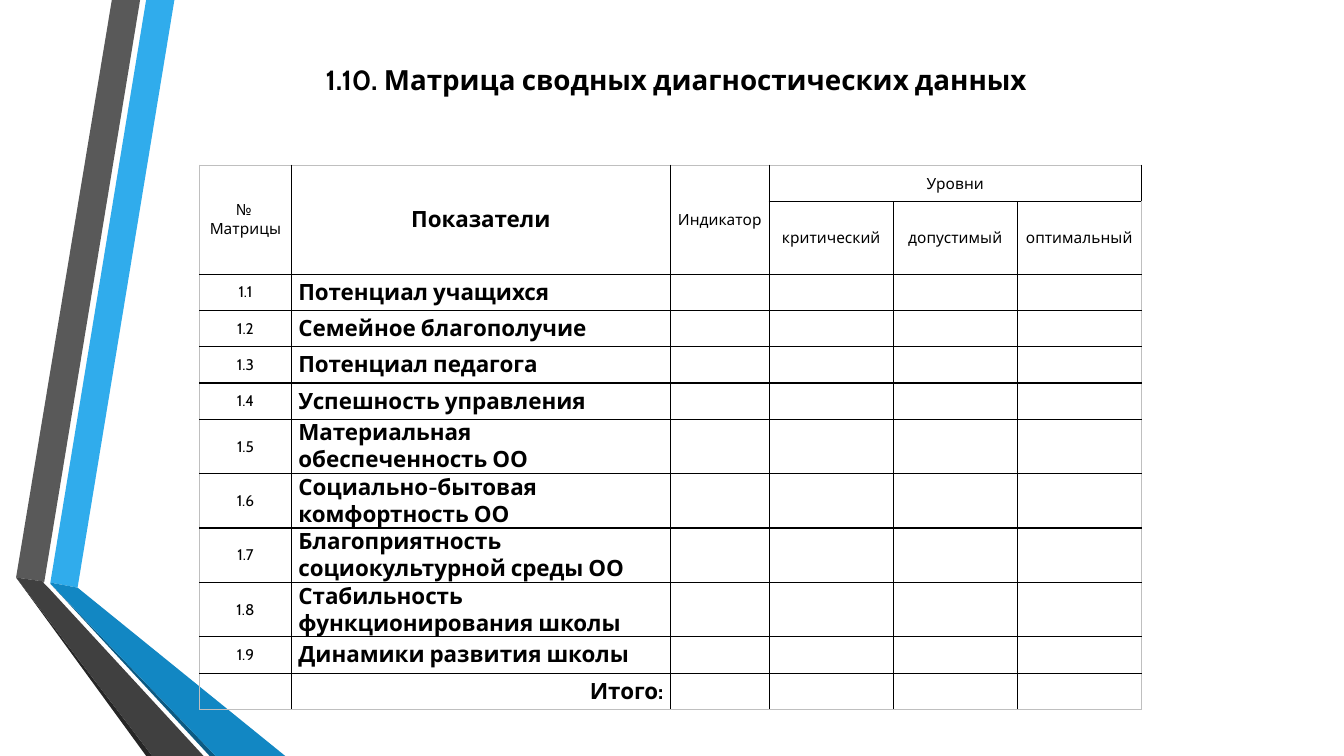
from dataclasses import dataclass

from lxml.etree import SubElement
from pptx import Presentation
from pptx.dml.color import RGBColor
from pptx.enum.text import MSO_ANCHOR, PP_ALIGN
from pptx.oxml.ns import qn
from pptx.util import Inches, Pt


@dataclass(frozen=True)
class Theme:
    font: str = "Cabin"
    ink: str = "000000"
    frame: str = "BFBFBF"
    title_size: float = 19.8
    label_size: float = 11
    indicator_size: float = 16
    rule_width: float = 1


THEME = Theme()
TITLE = "1.10. Матрица сводных диагностических данных"
HEADINGS = ["№ \vМатрицы", "Показатели", "Индикатор", "Уровни"]
LEVELS = ["критический", "допустимый", "оптимальный"]
INDICATORS = [
    "Потенциал учащихся",
    "Семейное благополучие",
    "Потенциал педагога",
    "Успешность управления",
    "Материальная обеспеченность ОО",
    "Социально-бытовая комфортность ОО",
    "Благоприятность социокультурной среды ОО",
    "Стабильность функционирования школы",
    "Динамики развития школы",
]
TOTAL = "Итого:"
RIBBON_UNIT = Inches(0.01)
RIBBONS = [
    ("30ACEC", [(50, 578), (77, 583), (173, 0), (145, 0)]),
    ("595959", [(139, 0), (111, 0), (16, 573), (44, 577)]),
    ("262626", [(16, 573), (145, 750), (151, 750)]),
    ("0C5A82", [(50, 579), (208, 750), (214, 750)]),
    ("1287C3", [(50, 579), (214, 750), (283, 750), (77, 583), (50, 578)]),
    ("404040", [(202, 750), (48, 583), (43, 578), (44, 577), (16, 573), (151, 750)]),
]
COLUMN_WIDTHS = [0.91, 3.76, 0.98] + [1.23] * len(LEVELS)
LINE_HEIGHT, WRAPPED_HEIGHT, LEVELS_HEIGHT = 0.36, 0.54, 0.72
WRAP_LENGTH = 25


def style_text(frame, size, bold, align):
    frame.vertical_anchor = MSO_ANCHOR.MIDDLE
    for paragraph in frame.paragraphs:
        paragraph.alignment = align
        paragraph.font.size = Pt(size)
        for run in paragraph.runs:
            run.font.name = THEME.font
            run.font.size = Pt(size)
            run.font.bold = bold
            run.font.color.rgb = RGBColor.from_string(THEME.ink)


def draw_ribbon(slide, color, points):
    builder = slide.shapes.build_freeform(*points[0], scale=RIBBON_UNIT)
    builder.add_line_segments(points[1:], close=True)
    ribbon = builder.convert_to_shape()
    ribbon.shadow.inherit = False
    ribbon.fill.solid()
    ribbon.fill.fore_color.rgb = RGBColor.from_string(color)
    ribbon.line.fill.background()


def draw_borders(cell, outer_sides):
    properties = cell._tc.get_or_add_tcPr()
    for position, side in enumerate(("lnL", "lnR", "lnT", "lnB")):
        line = SubElement(properties, qn(f"a:{side}"), w=str(Pt(THEME.rule_width)))
        color = THEME.frame if side in outer_sides else THEME.ink
        SubElement(SubElement(line, qn("a:solidFill")), qn("a:srgbClr"), val=color)
        properties.insert(position, line)


def table_rows():
    blanks = [""] * (1 + len(LEVELS))
    rows = [HEADINGS + [""] * (len(LEVELS) - 1), [""] * 3 + LEVELS]
    rows += [[f"1.{number}", name] + blanks for number, name in enumerate(INDICATORS, 1)]
    return rows + [["", TOTAL] + blanks]


def draw_matrix(slide):
    rows = table_rows()
    heights = [LINE_HEIGHT, LEVELS_HEIGHT]
    heights += [WRAPPED_HEIGHT if len(name) > WRAP_LENGTH else LINE_HEIGHT for name in INDICATORS]
    heights.append(LINE_HEIGHT)
    matrix = slide.shapes.add_table(
        len(rows), len(COLUMN_WIDTHS), Inches(1.98), Inches(1.64),
        Inches(sum(COLUMN_WIDTHS)), Inches(sum(heights)),
    ).table
    matrix.first_row = matrix.horz_banding = False
    for column, width in zip(matrix.columns, COLUMN_WIDTHS):
        column.width = Inches(width)
    for row, height in zip(matrix.rows, heights):
        row.height = Inches(height)
    for column in range(3):
        matrix.cell(0, column).merge(matrix.cell(1, column))
    matrix.cell(0, 3).merge(matrix.cell(0, len(COLUMN_WIDTHS) - 1))

    last_row, last_column = len(rows) - 1, len(COLUMN_WIDTHS) - 1
    for r, texts in enumerate(rows):
        for c, text in enumerate(texts):
            cell = matrix.cell(r, c)
            cell.margin_left = cell.margin_right = Inches(0.07)
            cell.margin_top = cell.margin_bottom = 0
            cell.vertical_anchor = MSO_ANCHOR.MIDDLE
            cell.fill.background()
            edges = {"lnL": c == 0, "lnR": c == last_column, "lnT": r == 0, "lnB": r == last_row}
            draw_borders(cell, [side for side, outer in edges.items() if outer])
            cell.text_frame.text = text
            named = c == 1
            align = PP_ALIGN.CENTER
            if named and r > 1:
                align = PP_ALIGN.RIGHT if r == last_row else PP_ALIGN.JUSTIFY
            size = THEME.indicator_size if named else THEME.label_size
            style_text(cell.text_frame, size, named, align)


def main():
    presentation = Presentation()
    presentation.slide_width, presentation.slide_height = Inches(13.33), Inches(7.5)
    slide = presentation.slides.add_slide(presentation.slide_layouts[6])
    for color, points in RIBBONS:
        draw_ribbon(slide, color, points)
    title = slide.shapes.add_textbox(Inches(1.86), Inches(0.58), Inches(9.69), Inches(0.41))
    title.text_frame.word_wrap = True
    title.text_frame.text = TITLE
    style_text(title.text_frame, THEME.title_size, True, PP_ALIGN.CENTER)
    draw_matrix(slide)
    presentation.save("out.pptx")


if __name__ == "__main__":
    main()
